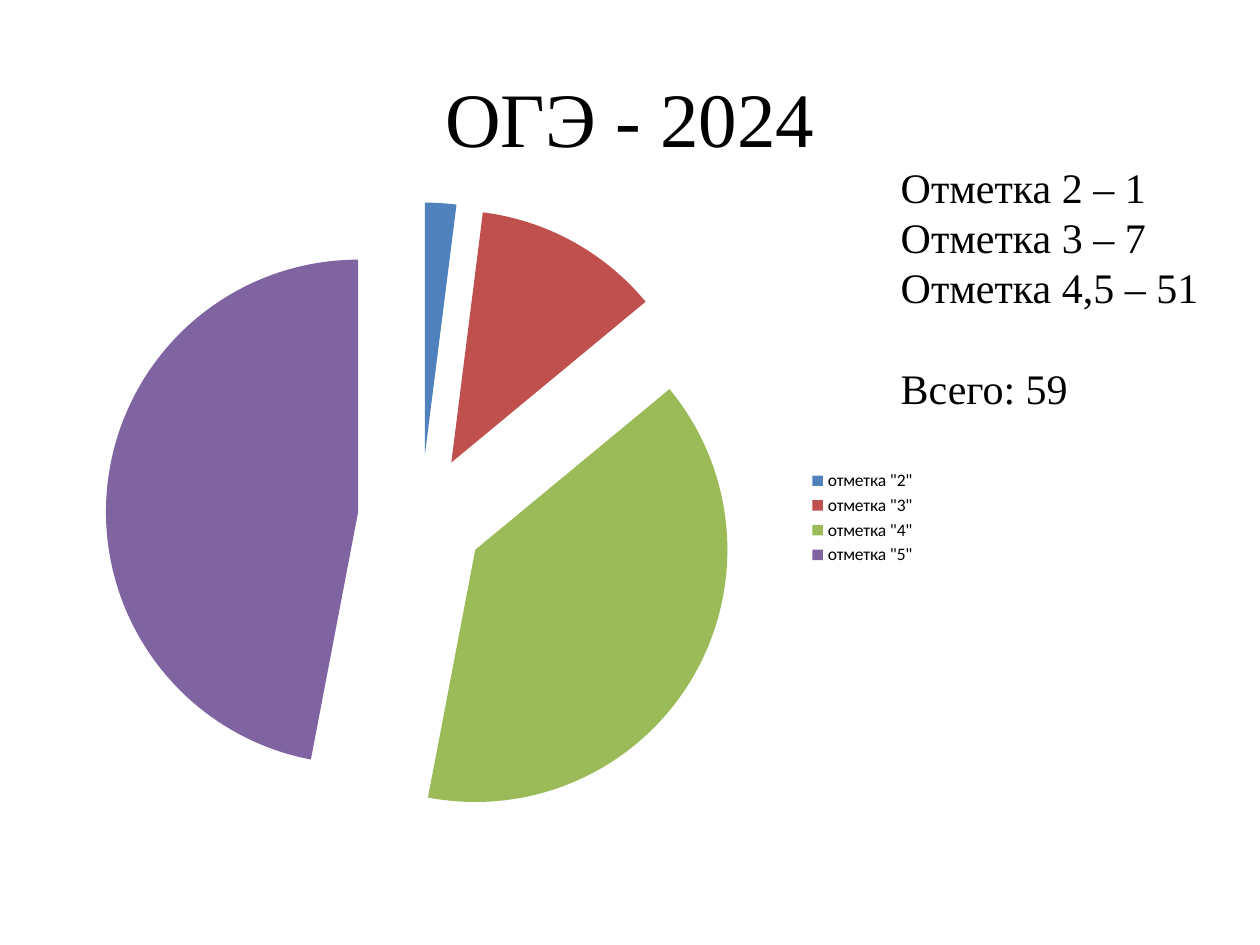
from pptx import Presentation
from pptx.chart.data import CategoryChartData
from pptx.dml.color import RGBColor
from pptx.enum.chart import XL_CHART_TYPE, XL_LEGEND_POSITION
from pptx.enum.text import MSO_ANCHOR, PP_ALIGN
from pptx.oxml import parse_xml
from pptx.oxml.ns import nsdecls
from pptx.util import Inches, Pt


def color(value):
    return RGBColor.from_string(value)


def add_text(paragraph, text, size):
    run = paragraph.add_run()
    run.text = text
    run.font.name = "Times New Roman"
    run.font.size = Pt(size)
    run.font.color.rgb = color("000000")


presentation = Presentation()
presentation.slide_width = Inches(10)
presentation.slide_height = Inches(7.5)
slide = presentation.slides.add_slide(presentation.slide_layouts[6])

title = slide.shapes.add_textbox(Inches(0.5), Inches(0.3), Inches(9), Inches(1.25)).text_frame
title.word_wrap = True
title.vertical_anchor = MSO_ANCHOR.MIDDLE
title.paragraphs[0].alignment = PP_ALIGN.CENTER
add_text(title.paragraphs[0], "ОГЭ - 2024", 44)

grades = [
    ('отметка "2"', 2, "4F81BD"),
    ('отметка "3"', 12, "C0504D"),
    ('отметка "4"', 39, "9BBB59"),
    ('отметка "5"', 47, "8064A2"),
]
grade_shares = CategoryChartData()
grade_shares.categories = [grade for grade, share, fill in grades]
grade_shares.add_series("Series 1", [share for grade, share, fill in grades])
pie = slide.shapes.add_chart(
    XL_CHART_TYPE.PIE, Inches(0.28), Inches(1.47), Inches(7.09), Inches(5.28), grade_shares
).chart
pie.has_title = False
pie.font.name = "Calibri"
pie.font.size = Pt(10)
pie.font.color.rgb = color("000000")
pie.has_legend = True
pie.legend.position = XL_LEGEND_POSITION.RIGHT
pie.legend.include_in_layout = False
pie.plots[0].vary_by_categories = True

slices = pie.plots[0].series[0]
for index, (grade, share, fill) in enumerate(grades):
    slice_fill = slices.points[index].format.fill
    slice_fill.solid()
    slice_fill.fore_color.rgb = color(fill)
first_point = slices.points[0].format and slices._element.find("{*}dPt")
first_point.addprevious(parse_xml(f'<c:explosion {nsdecls("c")} val="25"/>'))

summary = slide.shapes.add_textbox(Inches(7.05), Inches(1.23), Inches(2.59), Inches(2.12)).text_frame
summary.word_wrap = False
lines = ["Отметка 2 – 1", "Отметка 3 – 7", "Отметка 4,5 – 51", "Всего: 59"]
for index, line in enumerate(lines):
    paragraph = summary.paragraphs[0] if index == 0 else summary.add_paragraph()
    add_text(paragraph, line, 24)
summary.paragraphs[-1].space_before = Pt(28.8)

presentation.save("out.pptx")
